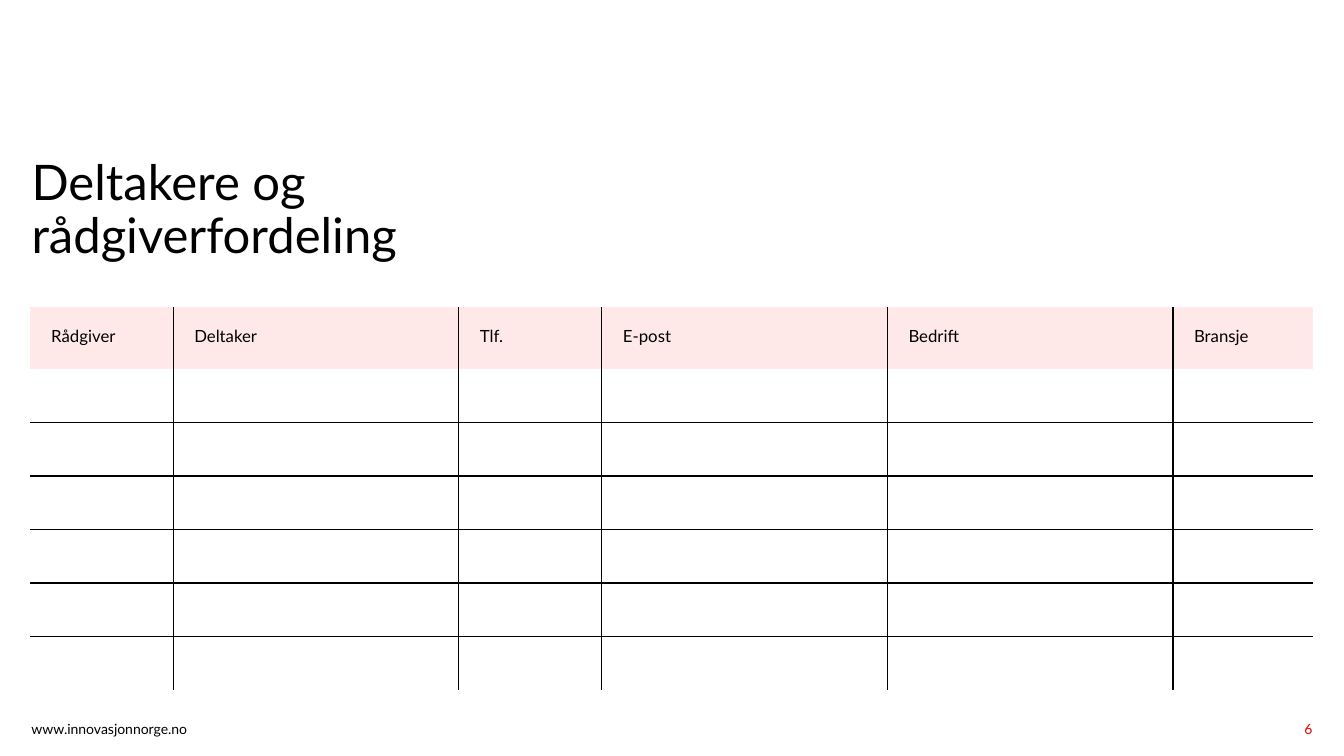
from dataclasses import dataclass

from lxml.etree import SubElement
from pptx import Presentation
from pptx.dml.color import RGBColor
from pptx.enum.text import MSO_ANCHOR, PP_ALIGN
from pptx.oxml.ns import qn
from pptx.util import Pt


@dataclass(frozen=True)
class Theme:
    font: str = "Lato"
    ink: str = "000000"
    accent: str = "ED0000"
    header_fill: str = "FFE9E8"
    title_size: int = 35
    header_size: int = 12
    footer_size: int = 10
    rule_width: int = 1


THEME = Theme()
COLUMNS = [
    ("Rådgiver", 102.2),
    ("Deltaker", 204),
    ("Tlf.", 102.2),
    ("E-post", 204),
    ("Bedrift", 204),
    ("Bransje", 100),
]
HEADER_HEIGHT = 44.3
ENTRY_HEIGHT = 38.2
ENTRY_COUNT = 6


def add_run(paragraph, wording, size, color):
    run = paragraph.add_run()
    run.text = wording
    run.font.name = THEME.font
    run.font.size = Pt(size)
    run.font.color.rgb = RGBColor.from_string(color)


def add_text(slide, box, wording, size, color=THEME.ink,
             align=PP_ALIGN.LEFT, line_spacing=1.0):
    frame = slide.shapes.add_textbox(*map(Pt, box)).text_frame
    frame.word_wrap = True
    frame.margin_left = frame.margin_right = 0
    frame.margin_top = frame.margin_bottom = 0
    frame.vertical_anchor = MSO_ANCHOR.TOP
    paragraph = frame.paragraphs[0]
    paragraph.alignment = align
    paragraph.line_spacing = line_spacing
    add_run(paragraph, wording, size, color)


def set_borders(cell, visible):
    properties = cell._tc.get_or_add_tcPr()
    for side in "LRTB":
        rule = SubElement(properties, qn(f"a:ln{side}"), w=str(Pt(THEME.rule_width)))
        if side in visible:
            fill = SubElement(rule, qn("a:solidFill"))
            SubElement(fill, qn("a:srgbClr"), val=THEME.ink)
        else:
            SubElement(rule, qn("a:noFill"))


def inner_sides(row, column):
    return {
        "L": column > 0,
        "R": column < len(COLUMNS) - 1,
        "T": row > 1,
        "B": 0 < row < ENTRY_COUNT,
    }


def fill_header(cell, label):
    cell.fill.solid()
    cell.fill.fore_color.rgb = RGBColor.from_string(THEME.header_fill)
    cell.vertical_anchor = MSO_ANCHOR.MIDDLE
    cell.margin_left = cell.margin_right = Pt(3.6)
    cell.margin_top = Pt(0)
    cell.margin_bottom = Pt(2.9)
    paragraph = cell.text_frame.paragraphs[0]
    paragraph._p.get_or_add_pPr().set("marL", str(Pt(11.5)))
    add_run(paragraph, label, THEME.header_size, THEME.ink)


def add_participants(slide, left, top):
    heights = [HEADER_HEIGHT] + [ENTRY_HEIGHT] * ENTRY_COUNT
    width = sum(column_width for _, column_width in COLUMNS)
    participants = slide.shapes.add_table(
        len(heights), len(COLUMNS), Pt(left), Pt(top), Pt(width), Pt(sum(heights))
    ).table
    participants.first_row = False
    participants.horz_banding = False
    for row, height in enumerate(heights):
        participants.rows[row].height = Pt(height)
    for column, (label, column_width) in enumerate(COLUMNS):
        participants.columns[column].width = Pt(column_width)
        for row in range(len(heights)):
            cell = participants.cell(row, column)
            sides = inner_sides(row, column)
            set_borders(cell, [side for side in sides if sides[side]])
            if row == 0:
                fill_header(cell, label)
            else:
                cell.fill.background()


def main():
    deck = Presentation()
    deck.slide_width = Pt(960)
    deck.slide_height = Pt(540)
    slide = deck.slides.add_slide(deck.slide_layouts[6])
    add_text(slide, (22.5, 514.8, 205, 14), "www.innovasjonnorge.no", THEME.footer_size)
    add_text(slide, (22.5, 113, 440.6, 101.5), "Deltakere og rådgiverfordeling",
             THEME.title_size, line_spacing=0.9)
    add_participants(slide, 21.5, 219.4)
    add_text(slide, (859.7, 514.8, 77.8, 17), "6", THEME.footer_size,
             THEME.accent, PP_ALIGN.RIGHT)
    deck.save("out.pptx")


if __name__ == "__main__":
    main()
